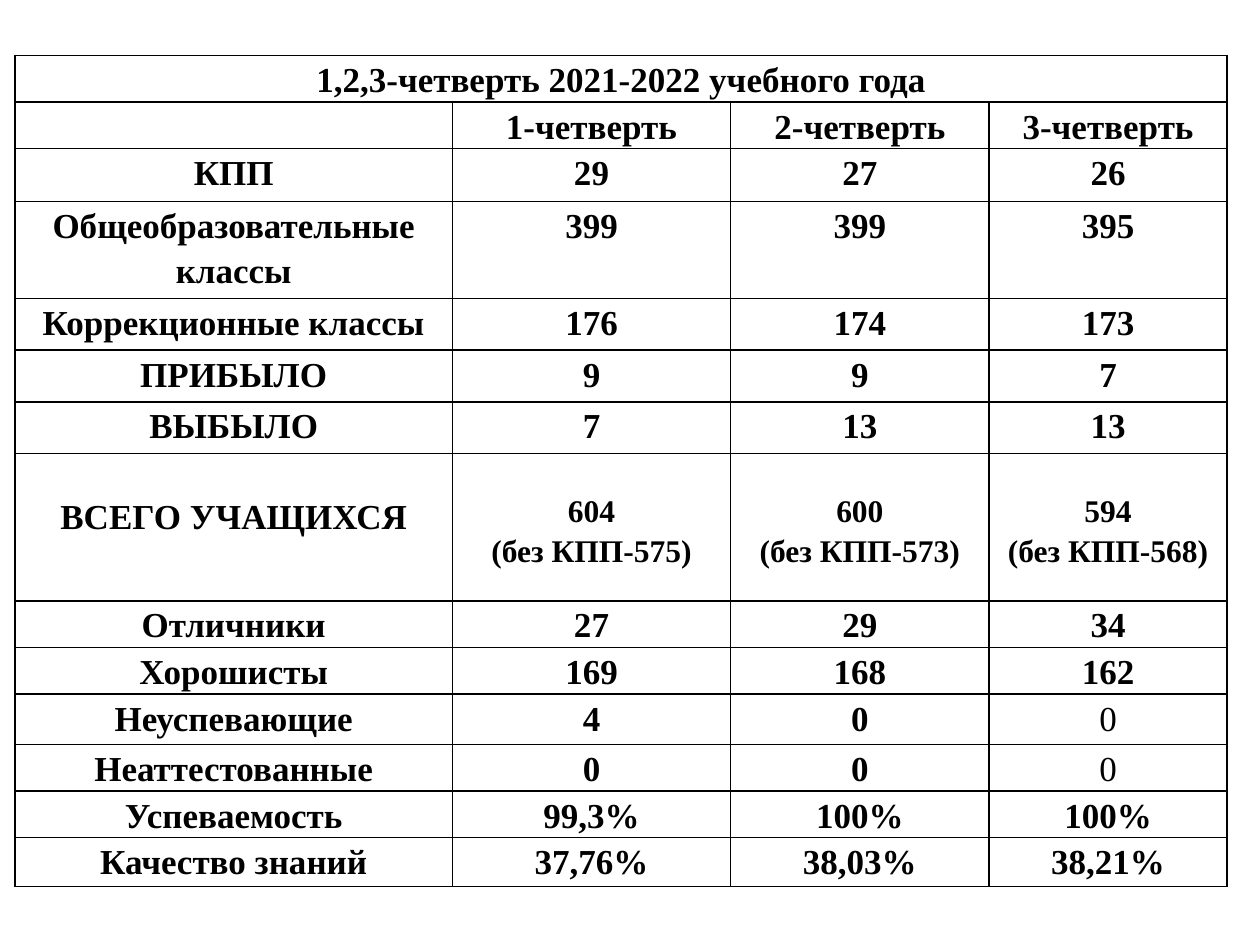
"""Builds a slide with the school's quarterly results table."""
from lxml.etree import SubElement
from pptx import Presentation
from pptx.dml.color import RGBColor
from pptx.enum.text import PP_ALIGN
from pptx.oxml.ns import qn
from pptx.util import Inches, Pt

COLORS = {"ink": "000000", "paper": "FFFFFF"}
FONT = "Times New Roman"
TITLE = "1,2,3-четверть 2021-2022 учебного года"
TOTAL = "ВСЕГО УЧАЩИХСЯ"
ROWS = [
    (0.37, TITLE, "", "", ""),
    (0.37, "", "1-четверть", "2-четверть", "3-четверть"),
    (0.42, "КПП", "29", "27", "26"),
    (0.77, "Общеобразовательные классы", "399", "399", "395"),
    (0.41, "Коррекционные классы", "176", "174", "173"),
    (0.41, "ПРИБЫЛО", "9", "9", "7"),
    (0.41, "ВЫБЫЛО", "7", "13", "13"),
    (1.17, TOTAL, "604\n(без КПП-575)", "600\n(без КПП-573)", "594\n(без КПП-568)"),
    (0.37, "Отличники", "27", "29", "34"),
    (0.37, "Хорошисты", "169", "168", "162"),
    (0.4, "Неуспевающие", "4", "0", "0"),
    (0.37, "Неаттестованные", "0", "0", "0"),
    (0.37, "Успеваемость", "99,3%", "100%", "100%"),
    (0.39, "Качество знаний", "37,76%", "38,03%", "38,21%"),
]
COLUMNS = [3.47, 2.21, 2.05, 1.89]
LEFT, TOP = 0.12, 0.44
REGULAR = {("Неуспевающие", 3), ("Неаттестованные", 3)}


def add_borders(cell):
    tc_pr = cell._tc.get_or_add_tcPr()
    for side in ("lnL", "lnR", "lnT", "lnB"):
        line = SubElement(tc_pr, qn(f"a:{side}"), w=str(Pt(1)))
        fill = SubElement(line, qn("a:solidFill"))
        SubElement(fill, qn("a:srgbClr"), val=COLORS["ink"])


def fill_cell(cell, text, size, bold, top):
    margins = {"margin_left": 0.07, "margin_right": 0.07, "margin_top": top, "margin_bottom": 0}
    for name, value in margins.items():
        setattr(cell, name, Inches(value))
    add_borders(cell)
    cell.fill.solid()
    cell.fill.fore_color.rgb = RGBColor.from_string(COLORS["paper"])
    cell.text = text
    for p in cell.text_frame.paragraphs:
        p.alignment, p.line_spacing = PP_ALIGN.CENTER, 1.15
        for r in p.runs:
            for name, value in {"name": FONT, "size": Pt(size), "bold": bold}.items():
                setattr(r.font, name, value)
            r.font.color.rgb = RGBColor.from_string(COLORS["ink"])


def main():
    prs = Presentation()
    prs.slide_width, prs.slide_height = Inches(10), Inches(7.5)
    s = prs.slides.add_slide(prs.slide_layouts[6])
    heights = [row[0] for row in ROWS]
    box = (LEFT, TOP, sum(COLUMNS), sum(heights))
    table = s.shapes.add_table(len(ROWS), len(COLUMNS), *map(Inches, box)).table
    table.first_row = table.horz_banding = False
    for column, width in zip(table.columns, COLUMNS):
        column.width = Inches(width)
    for row, height in zip(table.rows, heights):
        row.height = Inches(height)
    for i, (_, label, *values) in enumerate(ROWS):
        for j, text in enumerate([label, *values]):
            size = 18 if label == TOTAL and j else 20
            top = size / 64 if label == TOTAL else 0
            fill_cell(table.cell(i, j), text, size, (label, j) not in REGULAR, top)
    table.cell(0, 0).merge(table.cell(0, len(COLUMNS) - 1))
    prs.save("out.pptx")


if __name__ == "__main__":
    main()
